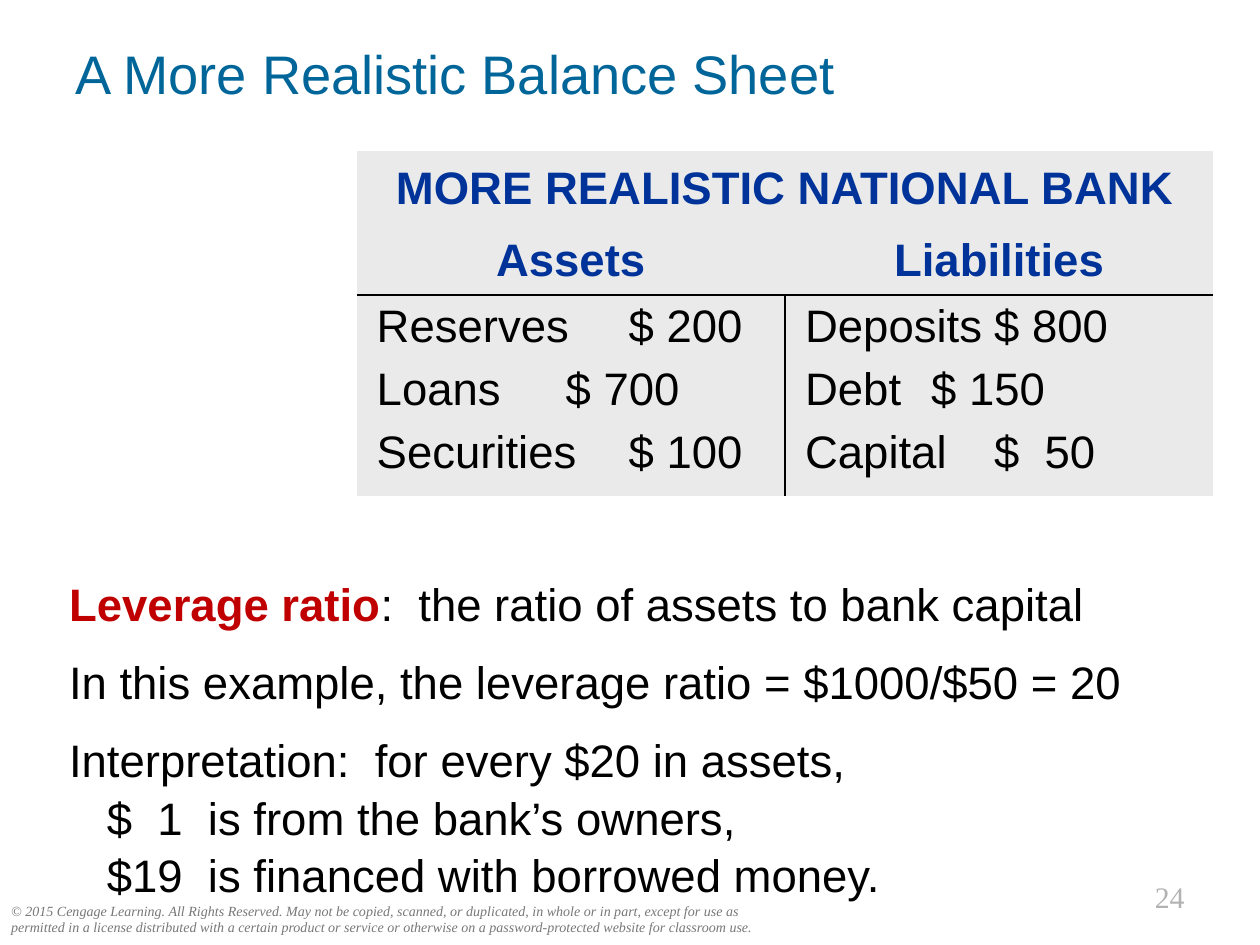
from typing import NamedTuple

from lxml.etree import SubElement
from pptx import Presentation
from pptx.dml.color import RGBColor as RGB
from pptx.enum.text import MSO_ANCHOR as Anchor, PP_ALIGN as Align
from pptx.oxml.ns import qn
from pptx.util import Emu, Inches, Pt

TEAL = RGB(0x00, 0x66, 0x99)
NAVY = RGB(0x00, 0x33, 0x99)
RED = RGB(0xC0, 0x00, 0x00)
BLACK = RGB(0x00, 0x00, 0x00)
PANEL = RGB(0xEA, 0xEA, 0xEA)
PAGE_GREY = RGB(0xB2, 0xB2, 0xB2)
NOTE_GREY = RGB(0x77, 0x77, 0x77)
SANS, SERIF = "Arial", "Times New Roman"
WIDTH, HEIGHT = Inches(10), Inches(7.5)


class Box(NamedTuple):
    """Position as shares of the slide's size."""
    left: float
    top: float
    width: float
    height: float

    def emu(self) -> tuple[Emu, ...]:
        sides = (WIDTH, HEIGHT, WIDTH, HEIGHT)
        return tuple(Emu(int(share * side)) for share, side in zip(self, sides))


class Style(NamedTuple):
    size: float
    color: RGB
    name: str = SANS
    bold: bool = False
    italic: bool = False


class Side(NamedTuple):
    heading: str
    tab: float
    entries: tuple[str, ...]


TITLE = Style(31, TEAL)
HEAD = Style(26, NAVY, bold=True)
BODY = Style(26, BLACK)
TERM = Style(26, RED, bold=True)
PAGE = Style(17, PAGE_GREY, SERIF)
NOTE = Style(8, NOTE_GREY, SERIF, italic=True)

SIDES = (
    Side("Assets", 2.06, ("Reserves\t$ 200", "Loans  \t$ 700", "Securities \t$ 100")),
    Side("Liabilities", 2.13, ("Deposits\t$ 800", "Debt\t$ 150", "Capital\t$  50")),
)
EXPLANATION = (
    ":  the ratio of assets to bank capital",
    "In this example, the leverage ratio = $1000/$50 = 20",
    "Interpretation:  for every $20 in assets, \v"
    "   $  1  is from the bank’s owners, \v"
    "   $19  is financed with borrowed money.",
)
COPYRIGHT = (
    "© 2015 Cengage Learning. All Rights Reserved. May not be copied, scanned, or "
    "duplicated, in whole or in part, except for use as permitted in a license "
    "distributed with a certain product or service or otherwise on a "
    "password-protected website for classroom use."
)


def set_font(target, style: Style) -> None:
    font = target.font
    font.size, font.name = Pt(style.size), style.name
    font.bold, font.italic = style.bold, style.italic
    font.color.rgb = style.color


def add_text(slide, box: Box, lines: tuple[str, ...], style: Style,
             align=Align.LEFT, anchor=Anchor.TOP, gap: float = 0, spacing: float = 1):
    tf = slide.shapes.add_textbox(*box.emu()).text_frame
    tf.word_wrap, tf.vertical_anchor = True, anchor
    for i, line in enumerate(lines):
        p = tf.add_paragraph() if i else tf.paragraphs[0]
        p.text, p.alignment, p.line_spacing = line, align, spacing
        if i:
            p.space_before = Pt(gap)
        set_font(p, style)
    return tf


def set_borders(cell, ruled: tuple[str, ...]) -> None:
    """Rule the named edges in black and clear the others."""
    props = cell._tc.get_or_add_tcPr()
    for i, edge in enumerate(("lnL", "lnR", "lnT", "lnB")):
        line = props.makeelement(qn(f"a:{edge}"), {"w": str(Pt(1))})
        if edge in ruled:
            fill = SubElement(line, qn("a:solidFill"))
            SubElement(fill, qn("a:srgbClr"), val=str(BLACK))
        else:
            SubElement(line, qn("a:noFill"))
        props.insert(i, line)


def fill_heading(cell, text: str) -> None:
    cell.vertical_anchor = Anchor.MIDDLE
    p = cell.text_frame.paragraphs[0]
    p.text, p.alignment = text, Align.CENTER
    set_font(p, HEAD)


def fill_entries(cell, side: Side) -> None:
    tf = cell.text_frame
    for i, entry in enumerate(side.entries):
        p = tf.add_paragraph() if i else tf.paragraphs[0]
        p.text = entry
        props = p._p.get_or_add_pPr()
        props.set("marL", str(Inches(0.06)))
        props.set("indent", "0")
        tabs = SubElement(props, qn("a:tabLst"))
        SubElement(tabs, qn("a:tab"), pos=str(Inches(side.tab)), algn="l")
        if i:
            p.space_before = Pt(7)
        set_font(p, BODY)


def add_balance_sheet(slide, box: Box, row_heights: tuple[float, ...]) -> None:
    table = slide.shapes.add_table(len(row_heights), len(SIDES), *box.emu()).table
    table.first_row = table.horz_banding = False
    for row, height in zip(table.rows, row_heights):
        row.height = Inches(height)
    for cell in table.iter_cells():
        cell.fill.solid()
        cell.fill.fore_color.rgb = PANEL
    table.cell(0, 0).merge(table.cell(0, 1))
    fill_heading(table.cell(0, 0), "MORE REALISTIC NATIONAL BANK")
    for col, (side, inner) in enumerate(zip(SIDES, ("lnR", "lnL"))):
        fill_heading(table.cell(1, col), side.heading)
        fill_entries(table.cell(2, col), side)
        for row, ruled in enumerate(((), ("lnB",), ("lnT", inner))):
            set_borders(table.cell(row, col), ruled)


def main() -> None:
    prs = Presentation()
    prs.slide_width, prs.slide_height = WIDTH, HEIGHT
    slide = prs.slides.add_slide(prs.slide_layouts[6])

    # Footer
    add_text(slide, Box(0.825, 0.923, 0.125, 0.052), ("24",), PAGE, Align.RIGHT)
    add_text(slide, Box(-0.001, 0.948, 0.618, 0.05), (COPYRIGHT,), NOTE)

    # Title
    add_text(slide, Box(0.05, 0.01, 0.9, 0.133), ("A More Realistic Balance Sheet",),
             TITLE, anchor=Anchor.MIDDLE)

    # Balance sheet
    add_balance_sheet(slide, Box(0.283, 0.16, 0.68, 0.355), (0.6, 0.54, 1.52))

    # Leverage ratio, with the term itself set apart
    tf = add_text(slide, Box(0.045, 0.6, 0.921, 0.357), EXPLANATION, BODY,
                  gap=12, spacing=1.05)
    p = tf.paragraphs[0]
    p.text = "Leverage ratio"
    set_font(p.runs[0], TERM)
    r = p.add_run()
    r.text = EXPLANATION[0]

    prs.save("out.pptx")


if __name__ == "__main__":
    main()
